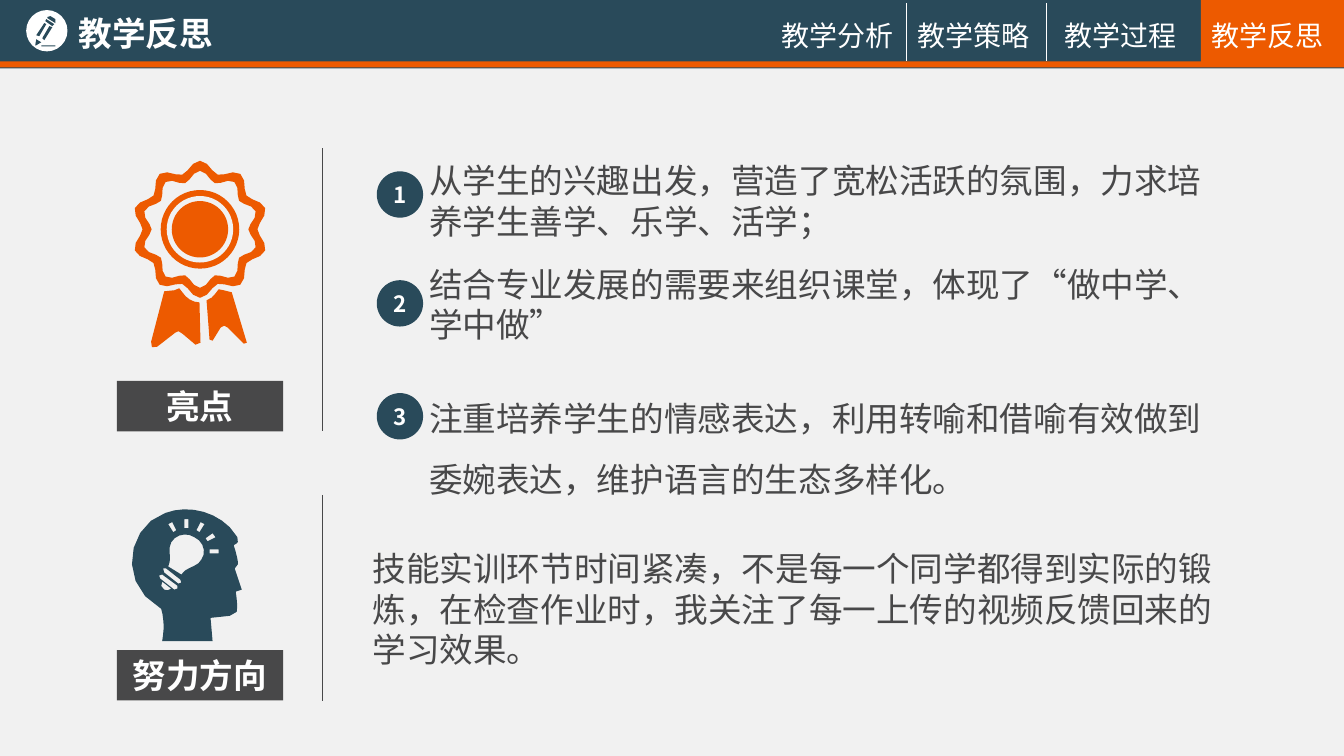
from dataclasses import dataclass
from math import cos, dist, pi, sin

from lxml.etree import SubElement
from pptx import Presentation
from pptx.dml.color import RGBColor
from pptx.enum.shapes import MSO_CONNECTOR, MSO_SHAPE
from pptx.enum.text import MSO_ANCHOR, PP_ALIGN
from pptx.oxml.ns import qn
from pptx.util import Inches, Pt


@dataclass(frozen=True)
class Theme:
    font: str = "Noto Sans CJK SC"
    paper: str = "F1F1F1"
    navy: str = "294A5A"
    orange: str = "ED5A00"
    gray: str = "484849"
    white: str = "FFFFFF"
    body: int = 24
    tab: int = 20
    number: int = 16


T = Theme()
CELL = Inches(0.1)
COLS, ROWS = 133.4, 75

TITLE = "教学反思"
TABS = [("教学分析", 77.6), ("教学策略", 91.1), ("教学过程", 105.7), ("教学反思", 120.2)]
TAB_RULES = [90, 103.9]
POINTS = [
    ("从学生的兴趣出发，营造了宽松活跃的氛围，力求培养学生善学、乐学、活学；", 17, 15.4, 9.1, 1),
    ("结合专业发展的需要来组织课堂，体现了“做中学、学中做”", 27.8, 25.7, 9.1, 1),
    ("注重培养学生的情感表达，利用转喻和借喻有效做到委婉表达，维护语言的生态多样化。", 39, 37, 13.1, 1.5),
]
EFFORT = "技能实训环节时间紧凑，不是每一个同学都得到实际的锻炼，在检查作业时，我关注了每一上传的视频反馈回来的学习效果。"
SECTIONS = [("亮点", 37.8, 14.7, 42.8), ("努力方向", 64.5, 49.1, 69.5)]

PENCIL = [
    [(41, 45), (55, 45), (55, 46), (41, 46)],
    [(42, 38), (49, 26), (52, 27), (44, 40)],
    [(36, 35), (44, 23), (46, 24), (39, 36)],
    [(35, 45), (36, 39), (41, 42), (36, 45)],
    [(46, 19), (45, 21), (52, 26), (54, 24)],
    [(47, 17), (50, 16), (55, 19), (55, 23), (47, 18)],
]
HEAD = [
    [(161, 636), (163, 625, 163, 614, 160, 604), (115, 579, 127, 521, 164, 509),
     (184, 501, 211, 506, 228, 523), (241, 536, 235, 539, 235, 539), (232, 541),
     (234, 547, 237, 558, 236, 560), (233, 564), (240, 585), (234, 587),
     (235, 594, 236, 600, 235, 607), (228, 611), (209, 613), (211, 636)],
    [(193, 533), (185, 528, 175, 530, 170, 538), (166, 546, 171, 554, 167, 562), (180, 570),
     (185, 562, 196, 563, 200, 555), (205, 548, 202, 537, 193, 533)],
    [(161, 577), (159, 580, 160, 583, 163, 585), (165, 586, 168, 586, 170, 584)],
    [(179, 575), (165, 564), (162, 564), (163, 568), (177, 579), (180, 578)],
    [(176, 581), (161, 570), (158, 571), (159, 574), (173, 585), (176, 584)],
    [(198, 528), (203, 520), (199, 518), (195, 526)],
    [(206, 537), (214, 533), (211, 529), (204, 534)],
    [(187, 524), (187, 515), (183, 515), (183, 524)],
    [(175, 526), (171, 518), (167, 520), (172, 528)],
    [(208, 549), (217, 549), (217, 545), (208, 545)],
]
RIBBONS = [
    [(230, 290), (222, 288), (217, 287), (214, 291), (212, 294, 209, 297, 205, 298),
     (208, 337), (211, 338), (219, 325), (221, 323, 224, 322, 226, 325),
     (242, 341), (245, 340)],
    [(198, 300), (191, 300, 185, 296, 181, 290), (178, 286), (173, 288), (163, 289),
     (150, 339), (149, 343, 151, 348, 156, 344), (174, 330),
     (176, 328, 178, 328, 181, 331), (194, 342), (199, 340)],
]


def scallop(cx, cy, radius, wave, lobes=10, steps=60):
    angles = [2 * pi * i / steps for i in range(steps)]
    radii = [radius + wave * cos(lobes * a) for a in angles]
    return [(cx + r * sin(a), cy - r * cos(a)) for a, r in zip(angles, radii)]


ROSETTE_CENTER = (198.5, 227.5)
ROSETTE = [scallop(*ROSETTE_CENTER, r, w) for r, w in [(62.5, 5.5), (53, 5)]] + RIBBONS
ROSETTE_DISCS = [(39, T.orange), (33, T.paper), (28, T.orange)]
BADGE_CENTER, BADGE_RADIUS = (46.5, 30.5), 20.5


def flatten(outline):
    pts = [outline[0]]
    for seg in outline[1:]:
        if len(seg) == 2:
            pts.append(seg)
            continue
        curve = [pts[-1], seg[:2], seg[2:4], seg[4:]]
        steps = max(2, min(7, round(dist(curve[0], curve[3]) / 5)))
        for i in range(1, steps + 1):
            t = i / steps
            weights = [(1 - t) ** 3, 3 * t * (1 - t) ** 2, 3 * t * t * (1 - t), t ** 3]
            pts.append(tuple(sum(w * c[k] for w, c in zip(weights, curve)) for k in (0, 1)))
    return [(round(10 * x), round(10 * y)) for x, y in pts]


def place(*cells):
    return [round(c * CELL) for c in cells]


def paint(sp, color):
    sp.shadow.inherit = False
    sp.fill.solid()
    sp.fill.fore_color.rgb = RGBColor.from_string(color)
    sp.line.fill.background()
    return sp


def block(s, box, color, kind=MSO_SHAPE.RECTANGLE):
    return paint(s.shapes.add_shape(kind, *place(*box)), color)


def disc(s, center, radius, color):
    x, y = [(c - radius) / 10 for c in center]
    block(s, (x, y, radius / 5, radius / 5), color, MSO_SHAPE.OVAL)


def icon(s, outlines, color):
    first, *rest = [flatten(o) for o in outlines]
    fb = s.shapes.build_freeform(*first[0], scale=CELL / 100)
    fb.add_line_segments(first[1:], close=True)
    for pts in rest:
        fb.move_to(*pts[0])
        fb.add_line_segments(pts[1:], close=True)
    paint(fb.convert_to_shape(), color)


def rule(s, x, top, bottom, color, width):
    c = s.shapes.add_connector(MSO_CONNECTOR.STRAIGHT, *place(x, top, x, bottom))
    c.line.color.rgb = RGBColor.from_string(color)
    c.line.width = Pt(width)
    SubElement(c._element.spPr, qn("a:effectLst"))


def write(sp, text, size, color, bold=False, align=PP_ALIGN.LEFT,
          anchor=MSO_ANCHOR.TOP, inset=(1, 0.5), wrap=True, spacing=1):
    tf = sp.text_frame
    tf.word_wrap = wrap
    tf.vertical_anchor = anchor
    tf.margin_left = tf.margin_right = round(inset[0] * CELL)
    tf.margin_top = tf.margin_bottom = round(inset[1] * CELL)
    p = tf.paragraphs[0]
    p.alignment = align
    p.line_spacing = spacing
    r = p.add_run()
    r.text = text
    r.font.size = Pt(size)
    r.font.bold = bold
    r.font.color.rgb = RGBColor.from_string(color)
    r.font.name = T.font
    rPr = r._r.get_or_add_rPr()
    rPr.set("lang", "zh-CN")
    SubElement(rPr, qn("a:ea")).set("typeface", T.font)


def textbox(s, box, *args, **kw):
    write(s.shapes.add_textbox(*place(*box)), *args, **kw)


def header(s):
    block(s, (0, 0, COLS, 6.8), T.navy)
    block(s, (0, 6.1, COLS, 0.6), T.orange)
    title = s.shapes.title
    s.shapes._spTree.append(title._element)
    title.left, title.top, title.width, title.height = place(6.8, 0.8, 15.5, 5)
    write(title, TITLE, T.body, T.white, bold=True, wrap=False)
    disc(s, BADGE_CENTER, BADGE_RADIUS, T.white)
    icon(s, PENCIL, T.navy)
    block(s, (119.2, 0, COLS - 119.2, 6.5), T.orange)
    for text, x in TABS:
        textbox(s, (x, 1.8, 11.2, 3.4), text, T.tab, T.white, inset=(0, 0), wrap=False)
    for x in TAB_RULES:
        rule(s, x, 0.3, 6.1, T.white, 0.5)


def body(s):
    centred = dict(bold=True, align=PP_ALIGN.CENTER, anchor=MSO_ANCHOR.MIDDLE)
    for n, (text, dot, top, height, spacing) in enumerate(POINTS, 1):
        circle = block(s, (37.4, dot, 4.6, 4.6), T.navy, MSO_SHAPE.OVAL)
        write(circle, str(n), T.number, T.white, inset=(0, 0), **centred)
        textbox(s, (41.6, top, 79.8, height), text, T.body, T.gray, spacing=spacing)
    textbox(s, (36, 53.9, 85.4, 13.1), EFFORT, T.body, T.gray)
    icon(s, ROSETTE, T.orange)
    for radius, color in ROSETTE_DISCS:
        disc(s, ROSETTE_CENTER, radius, color)
    icon(s, HEAD, T.navy)
    for label, y, top, bottom in SECTIONS:
        write(block(s, (11.6, y, 16.5, 5), T.gray), label, T.body, T.white, **centred)
        rule(s, 32, top, bottom, T.gray, 0.75)


def main():
    prs = Presentation()
    prs.slide_width, prs.slide_height = place(COLS, ROWS)
    s = prs.slides.add_slide(prs.slide_layouts[5])
    s.background.fill.solid()
    s.background.fill.fore_color.rgb = RGBColor.from_string(T.paper)
    header(s)
    body(s)
    prs.save("out.pptx")


if __name__ == "__main__":
    main()
